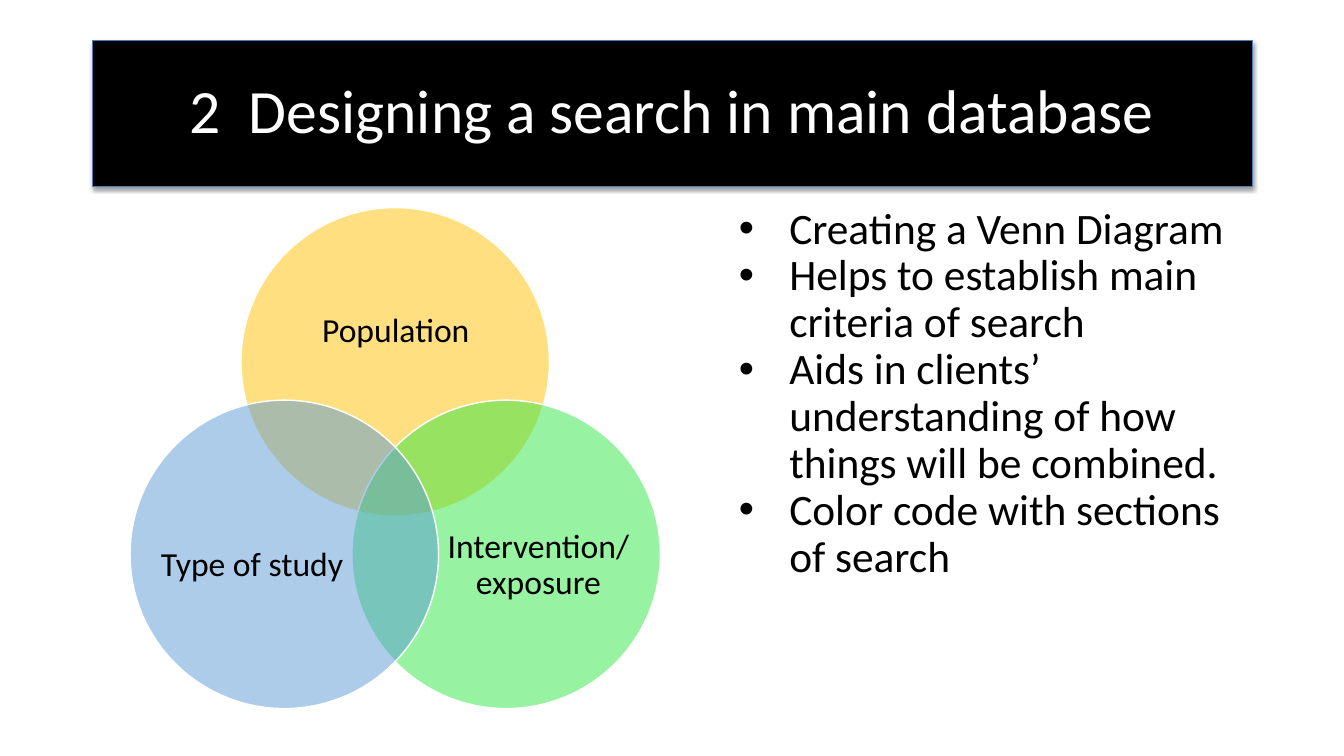
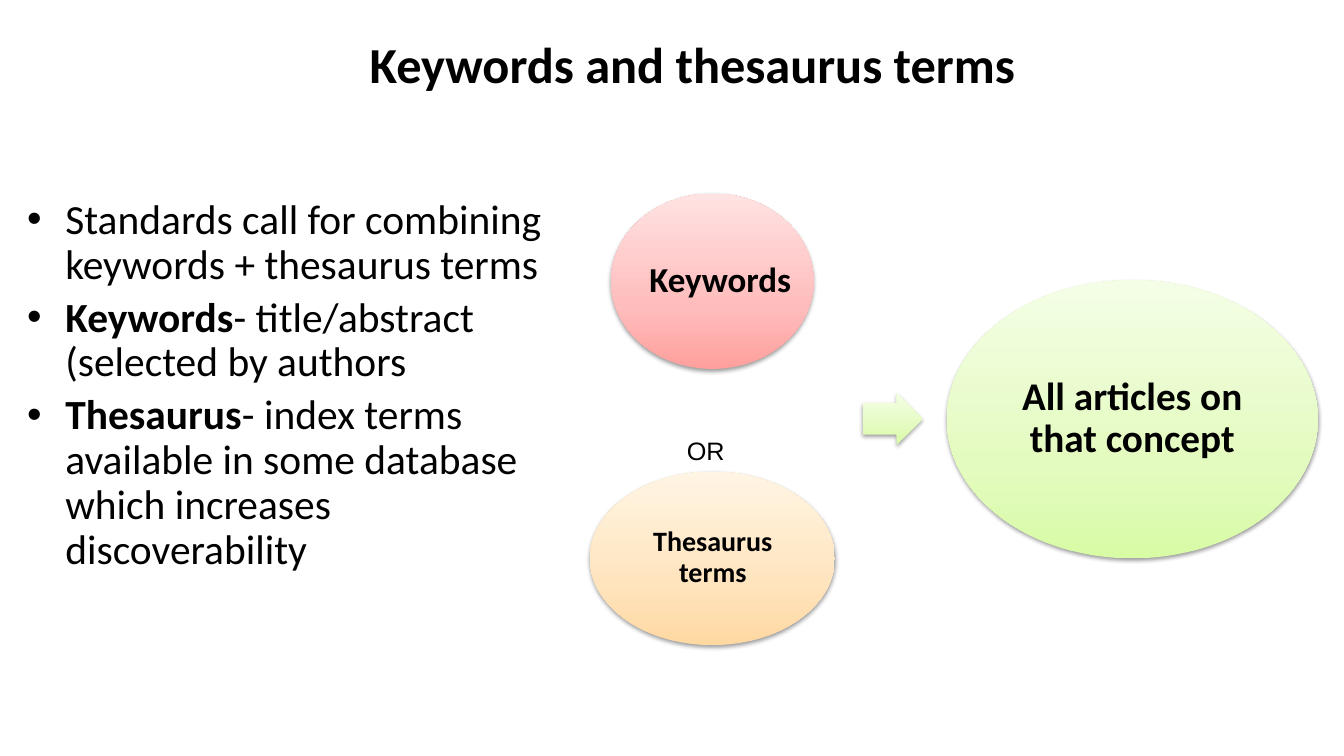
from copy import deepcopy

from lxml.etree import SubElement
from pptx import Presentation
from pptx.dml.color import RGBColor
from pptx.enum.shapes import MSO_SHAPE as Preset
from pptx.enum.text import MSO_ANCHOR as Anchor, MSO_AUTO_SIZE as AutoSize, PP_ALIGN as Align
from pptx.oxml.ns import qn
from pptx.util import Inches, Pt

FONT = "Calibri"
BLACK, WHITE = "000000", "FFFFFF"
TITLE_BORDER = "4A7DBA"
YELLOW, GREEN, BLUE = "FFC000", "30E845", "5B9BD5"
# Gradients run from the bottom to the top.
GRADIENT_POSITIONS = (0, 0.35, 1)
RED_GRADIENT = ("FFA09D", "FFBCBC", "FFE2E2")
ORANGE_GRADIENT = ("FFD8A2", "FFE4BD", "FFF5E4")
LIME_GRADIENT = ("D8FBA5", "E4FBC0", "F4FEE6")


def rgb(color):
    return RGBColor.from_string(color)


def add_bullet(paragraph, indent, hanging):
    properties = paragraph._p.get_or_add_pPr()
    properties.set("marL", str(Inches(indent)))
    properties.set("indent", str(-Inches(hanging)))
    SubElement(properties, qn("a:buFont"), typeface="Arial")
    SubElement(properties, qn("a:buChar"), char="•")


def write_text(shape, paragraphs, size, color=BLACK, font=FONT, bold=False,
               align=Align.CENTER, anchor=Anchor.MIDDLE, margins=(0.1, 0.05),
               line_spacing=0.9, space_before=0, bullet=None):
    """Each paragraph is a list of (text, bold) runs or a plain string."""
    frame = shape.text_frame
    frame.word_wrap = True
    frame.auto_size = AutoSize.NONE
    frame.vertical_anchor = anchor
    frame.margin_left = frame.margin_right = Inches(margins[0])
    frame.margin_top = frame.margin_bottom = Inches(margins[1])
    for index, content in enumerate(paragraphs):
        paragraph = frame.add_paragraph() if index else frame.paragraphs[0]
        paragraph.alignment = align
        paragraph.line_spacing = line_spacing
        paragraph.space_before = Pt(space_before if index else 0)
        if bullet:
            add_bullet(paragraph, *bullet)
        runs = [(content, bold)] if isinstance(content, str) else content
        for text, run_bold in runs:
            run = paragraph.add_run()
            run.text = text
            run.font.name = font
            run.font.size = Pt(size)
            run.font.bold = run_bold
            run.font.color.rgb = rgb(color)


def add_text(slide, box, paragraphs, **text_format):
    text_box = slide.shapes.add_textbox(*map(Inches, box))
    write_text(text_box, paragraphs, **text_format)


def add_shape(slide, preset, box):
    shape = slide.shapes.add_shape(preset, *map(Inches, box))
    shape.shadow.inherit = False
    return shape


def add_soft_shadow(shape):
    shape.shadow.inherit = False
    effects = shape.element.spPr.find(qn("a:effectLst"))
    shadow = SubElement(effects, qn("a:outerShdw"), blurRad=str(Pt(3.1)),
                        dist=str(Pt(1.6)), dir="5400000", rotWithShape="0")
    color = SubElement(shadow, qn("a:srgbClr"), val=BLACK)
    SubElement(color, qn("a:alpha"), val="38000")


def add_gradient_shape(slide, preset, box, colors):
    shape = add_shape(slide, preset, box)
    shape.line.fill.background()
    shape.fill.gradient()
    shape.fill.gradient_angle = 90
    stop_list = shape.element.spPr.find(".//" + qn("a:gsLst"))
    stop_list.insert(1, deepcopy(stop_list[0]))
    for stop, position, color in zip(shape.fill.gradient_stops, GRADIENT_POSITIONS, colors):
        stop.position = position
        stop.color.rgb = rgb(color)
    add_soft_shadow(shape)
    return shape


def add_titled_slide(presentation, title_text, box, **text_format):
    slide = presentation.slides.add_slide(presentation.slide_layouts[5])
    title = slide.shapes.title
    title.left, title.top, title.width, title.height = map(Inches, box)
    write_text(title, [title_text], **text_format)
    return slide


def add_bullet_list(slide, box, paragraphs, size, bullet, space_before=0):
    add_text(slide, box, paragraphs, size=size, bullet=bullet,
             space_before=space_before, align=Align.LEFT, anchor=Anchor.TOP)


def add_venn(slide, left, top):
    diameter, step, drop = 3.06, 1.1, 1.91
    label_width, label_height, label_top, edge = 1.84, 1.68, 0.8, 0.29
    right_edge = diameter - edge - label_width
    circles = [
        ("Population", YELLOW, step, 0, (0.41, 0.54, 2.25, 1.38)),
        ("Intervention/ exposure", GREEN, 2 * step, drop,
         (right_edge, label_top, label_width, label_height)),
        ("Type of study", BLUE, 0, drop, (edge, label_top, label_width, label_height)),
    ]
    for label, color, dx, dy, (label_dx, label_dy, width, height) in circles:
        x, y = left + dx, top + dy
        circle = add_shape(slide, Preset.OVAL, (x, y, diameter, diameter))
        circle.fill.solid()
        circle.fill.fore_color.rgb = rgb(color)
        fill_color = circle.element.spPr.find(qn("a:solidFill") + "/" + qn("a:srgbClr"))
        SubElement(fill_color, qn("a:alpha"), val="50000")
        circle.line.color.rgb = rgb(WHITE)
        circle.line.width = Pt(1)
        add_text(slide, (x + label_dx, y + label_dy, width, height), [label],
                 size=24, margins=(0, 0))


def add_concept_flow(slide, left, top):
    """Two kinds of terms lead through an arrow to the combined result."""
    ovals = [
        ("Keywords", 25, RED_GRADIENT, (0.21, 0, 2.01, 1.74), (0.51, 0.25, 1.57, 1.23)),
        ("Thesaurus terms", 20, ORANGE_GRADIENT, (0, 2.76, 2.43, 1.72), (0.36, 3.01, 1.72, 1.21)),
        ("All articles on that concept", 28, LIME_GRADIENT,
         (3.54, 0.86, 3.68, 2.76), (4.08, 1.26, 2.6, 1.95)),
    ]

    def place(box):
        x, y, width, height = box
        return left + x, top + y, width, height

    for label, size, colors, oval_box, label_box in ovals:
        add_gradient_shape(slide, Preset.OVAL, place(oval_box), colors)
        add_text(slide, place(label_box), [label], size=size, bold=True, margins=(0.02, 0.02))
    arrow = add_gradient_shape(slide, Preset.RIGHT_ARROW, place((2.71, 1.98, 0.59, 0.51)),
                               LIME_GRADIENT)
    arrow.adjustments[0], arrow.adjustments[1] = 0.6, 0.5
    add_text(slide, place((0.5, 2.35, 1.3, 0.62)), ["OR"], size=18, font="Arial",
             anchor=Anchor.TOP, line_spacing=1)


def build_search_slide(presentation):
    slide = add_titled_slide(presentation, "2  Designing a search in main database",
                             (0.92, 0.4, 11.5, 1.45), size=44, color=WHITE)
    title = slide.shapes.title
    title.fill.solid()
    title.fill.fore_color.rgb = rgb(BLACK)
    title.line.color.rgb = rgb(TITLE_BORDER)
    title.line.width = Pt(0.75)
    add_soft_shadow(title)
    add_venn(slide, 1.29, 2.06)
    add_bullet_list(slide, (6.75, 2, 5.67, 4.76), [
        "Creating a Venn Diagram",
        "Helps to establish main criteria of search",
        "Aids in clients’ understanding of how things will be combined.",
        "Color code with sections of search",
    ], size=31, bullet=(0.98, 0.5))


def build_terms_slide(presentation):
    slide = add_titled_slide(presentation, "Keywords and thesaurus terms",
                             (0.59, 0.11, 12.56, 1.11), size=36, bold=True)
    add_bullet_list(slide, (0.17, 1.92, 5.57, 5.33), [
        "Standards call for combining keywords + thesaurus terms",
        [("Keywords", True), ("- title/abstract (selected by authors", False)],
        [("Thesaurus", True),
         ("- index terms available in some database which increases discoverability", False)],
    ], size=29.6, bullet=(0.38, 0.38), space_before=5.9)
    add_concept_flow(slide, 5.85, 1.92)


def main():
    presentation = Presentation()
    presentation.slide_width = Inches(13.33)
    presentation.slide_height = Inches(7.5)
    build_search_slide(presentation)
    build_terms_slide(presentation)
    presentation.save("out.pptx")


if __name__ == "__main__":
    main()
